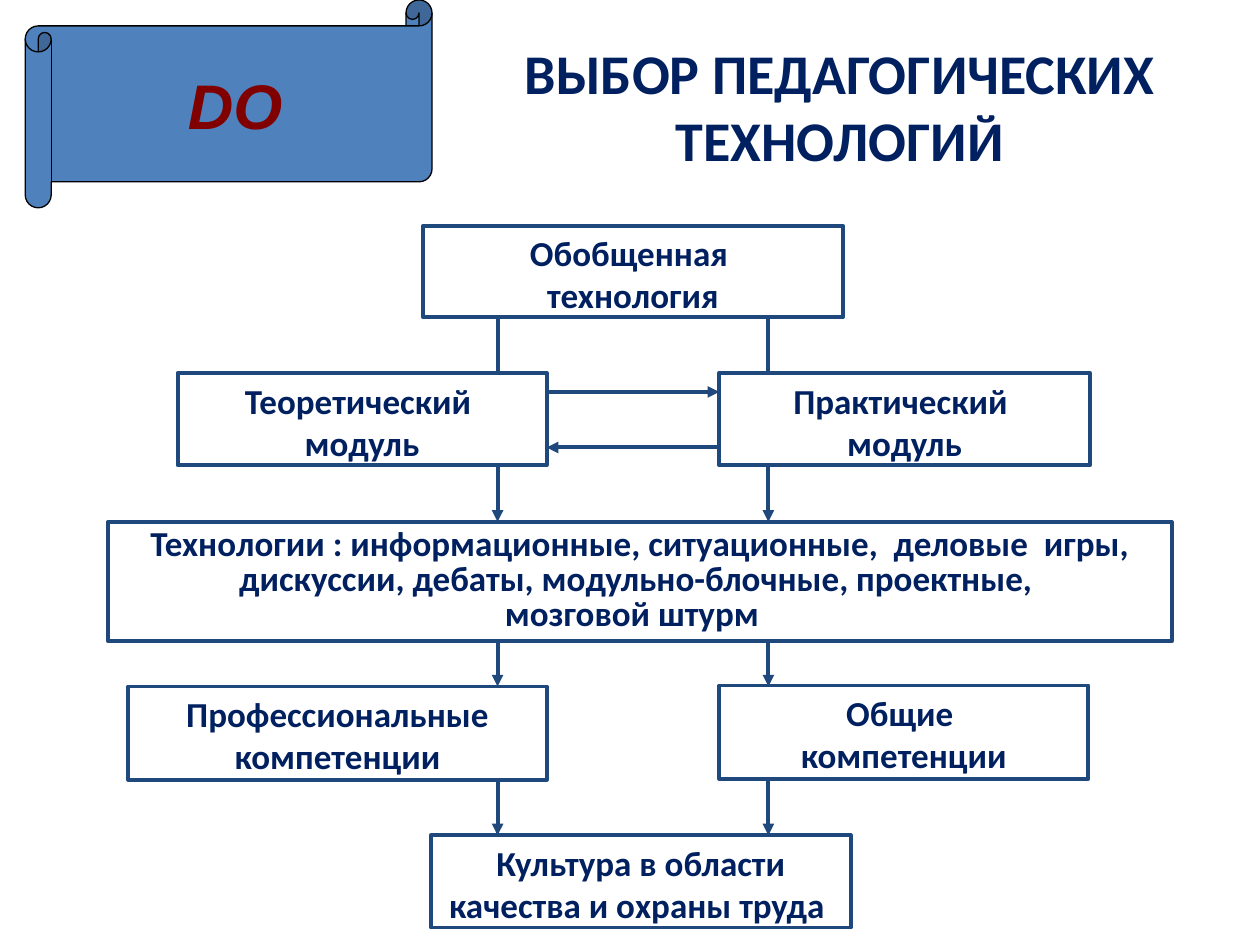
import pptx
import pptx.util
import pptx.dml.color
import pptx.enum.shapes
import pptx.enum.text
import pptx.oxml
import pptx.oxml.ns

Cm, Pt = pptx.util.Cm, pptx.util.Pt
Kind = pptx.enum.shapes.MSO_SHAPE
Anchor = pptx.enum.text.MSO_ANCHOR
Align = pptx.enum.text.PP_ALIGN

theme = {
    "ink": "002060", "edge": "1F497D", "fill": "FFFFFF",
    "scroll": "4F81BD", "rim": "000000", "mark": "800000",
    "font": "Calibri", "alt": "Arial",
    "title": 32, "body": 20, "big": 36, "line": 2.25, "thin": 0.75,
}

title = ["ВЫБОР ПЕДАГОГИЧЕСКИХ ТЕХНОЛОГИЙ"]
badge = ["DO"]
boxes = [
    (["Обобщенная ", "технология"], (8.53, 4.55, 8.46, 1.85)),
    (["Практический ", "модуль"], (14.5, 7.52, 7.47, 1.86)),
    (["Теоретический ", "модуль"], (3.58, 7.52, 7.44, 1.86)),
    (["Общие ", "компетенции"], (14.5, 13.82, 7.44, 1.88)),
    (["Профессиональные компетенции"], (2.59, 13.84, 8.43, 1.88)),
    (["Культура в области качества и охраны труда "], (8.69, 16.84, 8.46, 1.86)),
]
methods = [
    "Технологии : информационные, ситуационные,  деловые  игры, "
    "дискуссии, дебаты, модульно-блочные, проектные, ",
    "мозговой штурм  ",
]
lanes = (10.03, 15.49)
drop = 1.12
stops = [(7.52, False), (10.52, True), (13.84, True), (16.84, True)]
left, right = 11.02, 14.5
swaps = [(left, right, 7.9), (right, left, 9.02)]


def color(key):
    return pptx.dml.color.RGBColor.from_string(theme[key])


def write(shape, lines, size="body", font="font", ink="ink", italic=None,
          anchor=Anchor.TOP, wrap=True, pitch=None):
    frame = shape.text_frame
    frame.word_wrap = wrap
    frame.vertical_anchor = anchor
    for i, text in enumerate(lines):
        para = frame.paragraphs[0] if i == 0 else frame.add_paragraph()
        para.alignment = Align.CENTER
        if pitch:
            para.line_spacing = Pt(pitch)
        run = para.add_run()
        run.text = text
        run.font.name = theme[font]
        run.font.size = Pt(theme[size])
        run.font.bold = True
        run.font.italic = italic
        run.font.color.rgb = color(ink)


def draw(slide, area, kind=Kind.RECTANGLE, fill="fill", edge="edge", width="line"):
    shape = slide.shapes.add_shape(kind, *map(Cm, area))
    shape.shadow.inherit = False
    shape.fill.solid()
    shape.fill.fore_color.rgb = color(fill)
    shape.line.color.rgb = color(edge)
    shape.line.width = Pt(theme[width])
    return shape


def link(slide, ends, arrow=True):
    line = slide.shapes.add_connector(
        pptx.enum.shapes.MSO_CONNECTOR.STRAIGHT, *map(Cm, ends))
    line.line.color.rgb = color("edge")
    line.line.width = Pt(theme["line"])
    space = pptx.oxml.ns.nsdecls("a")
    if arrow:
        line.line._get_or_add_ln().append(
            pptx.oxml.parse_xml(f'<a:tailEnd {space} type="triangle"/>'))
    line._element.spPr.append(pptx.oxml.parse_xml(f"<a:effectLst {space}/>"))


def main():
    deck = pptx.Presentation()
    deck.slide_width, deck.slide_height = Cm(25.4), Cm(19.05)
    slide = deck.slides.add_slide(deck.slide_layouts[6])

    head = slide.shapes.add_textbox(*map(Cm, (8.94, 0.71, 15.98, 2.84)))
    write(head, title, size="title", anchor=Anchor.MIDDLE)

    for lines, area in boxes:
        write(draw(slide, area), lines)
    for x in lanes:
        for y, arrow in stops:
            link(slide, (x, y - drop, x, y), arrow)
    for start, end, y in swaps:
        link(slide, (start, y, end, y))
    write(draw(slide, (2.18, 10.52, 21.44, 2.41)), methods, pitch=20)

    scroll = draw(slide, (0.51, 0, 8.2, 4.19), Kind.HORIZONTAL_SCROLL,
                  "scroll", "rim", "thin")
    write(scroll, badge, size="big", font="alt", ink="mark", italic=True,
          anchor=Anchor.MIDDLE, wrap=False)
    deck.save("out.pptx")


if __name__ == "__main__":
    main()
